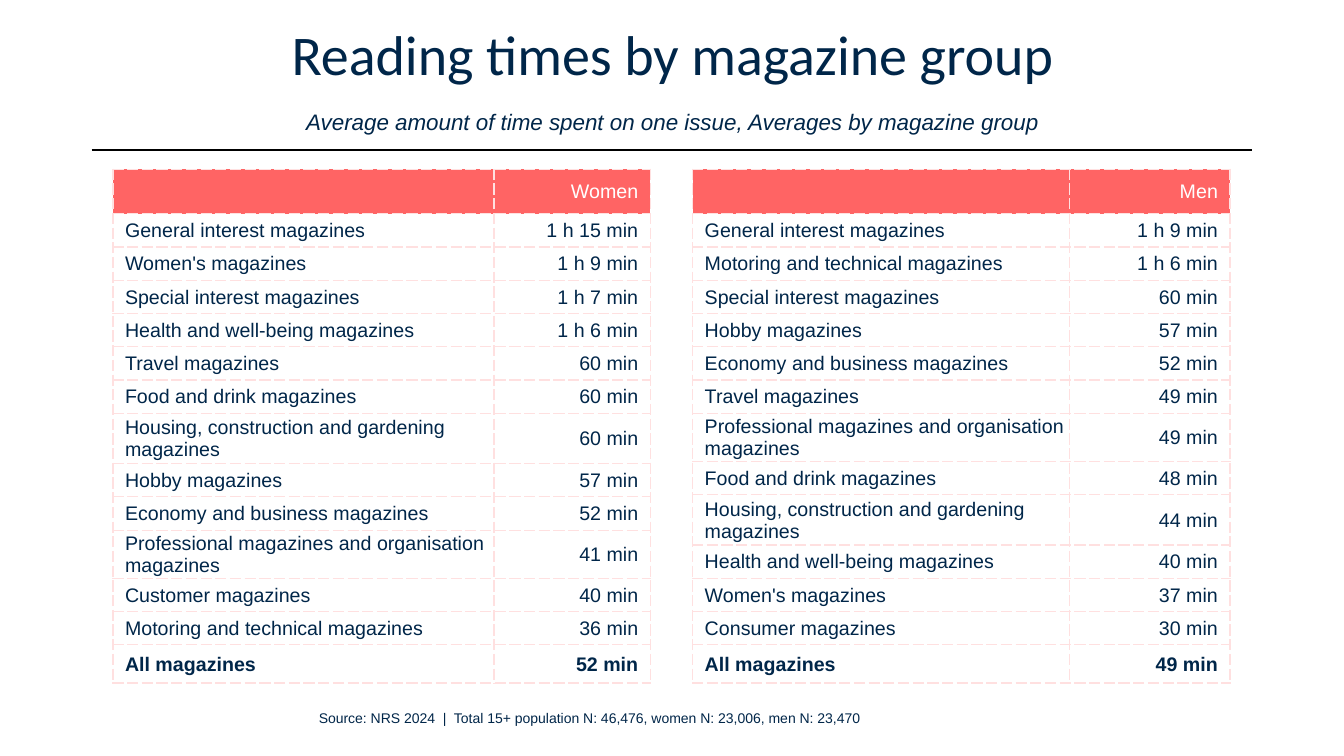
from dataclasses import dataclass

from lxml.etree import SubElement
from pptx import Presentation
from pptx.dml.color import RGBColor
from pptx.enum.shapes import MSO_CONNECTOR
from pptx.enum.text import MSO_ANCHOR, MSO_AUTO_SIZE, PP_ALIGN
from pptx.oxml import parse_xml
from pptx.oxml.ns import nsdecls, qn
from pptx.slide import Slide
from pptx.table import _Cell as Cell
from pptx.text.text import _Paragraph as Paragraph
from pptx.util import Inches, Pt

NAVY, CORAL, PINK, WHITE, BLACK = "002649", "FF6464", "FFE0E0", "FFFFFF", "000000"
HEADER_H, ROW_H, TALL_H, TOTAL_H = 0.44, 0.33, 0.5, 0.38
TABLE_TOP, TABLE_W = 1.68, 5.33
TALL_GROUP = "Housing, construction and gardening magazines"


@dataclass
class ReadingTable:
    header: str
    left: float
    label_w: float
    rows: list[tuple[str, str]]


TABLES = [
    ReadingTable("Women", 1.12, 3.78, [
        ("General interest magazines", "1 h 15 min"),
        ("Women's magazines", "1 h 9 min"),
        ("Special interest magazines", "1 h 7 min"),
        ("Health and well-being magazines", "1 h 6 min"),
        ("Travel magazines", "60 min"),
        ("Food and drink magazines", "60 min"),
        (TALL_GROUP, "60 min"),
        ("Hobby magazines", "57 min"),
        ("Economy and business magazines", "52 min"),
        ("Professional magazines and organisation magazines", "41 min"),
        ("Customer magazines", "40 min"),
        ("Motoring and technical magazines", "36 min"),
        ("All magazines", "52 min"),
    ]),
    ReadingTable("Men", 6.87, 3.74, [
        ("General interest magazines", "1 h 9 min"),
        ("Motoring and technical magazines", "1 h 6 min"),
        ("Special interest magazines", "60 min"),
        ("Hobby magazines", "57 min"),
        ("Economy and business magazines", "52 min"),
        ("Travel magazines", "49 min"),
        ("Professional magazines and organisation magazines", "49 min"),
        ("Food and drink magazines", "48 min"),
        (TALL_GROUP, "44 min"),
        ("Health and well-being magazines", "40 min"),
        ("Women's magazines", "37 min"),
        ("Consumer magazines", "30 min"),
        ("All magazines", "49 min"),
    ]),
]


def rgb(color: str) -> RGBColor:
    return RGBColor.from_string(color)


def add_run(p: Paragraph, text: str, size: float, color: str = NAVY,
            font: str = "Arial", bold: bool = False, italic: bool = False) -> None:
    r = p.add_run()
    r.text = text
    r.font.name, r.font.size = font, Pt(size)
    r.font.bold, r.font.italic = bold, italic
    r.font.color.rgb = rgb(color)


def set_borders(cell: Cell) -> None:
    """Give all four sides of the cell a dashed pink line."""
    tc_pr = cell._tc.get_or_add_tcPr()
    for i, side in enumerate(("lnL", "lnR", "lnT", "lnB")):
        tc_pr.insert(i, parse_xml(
            f'<a:{side} {nsdecls("a")} w="{Pt(1)}"><a:solidFill>'
            f'<a:srgbClr val="{PINK}"/></a:solidFill>'
            f'<a:prstDash val="sysDash"/></a:{side}>'))


def set_cell(cell: Cell, text: str, margins: tuple[float, float, float, float],
             align: PP_ALIGN, color: str, bold: bool) -> None:
    cell.vertical_anchor = MSO_ANCHOR.MIDDLE
    (cell.margin_left, cell.margin_top,
     cell.margin_right, cell.margin_bottom) = map(Inches, margins)
    p = cell.text_frame.paragraphs[0]
    p.alignment = align
    if text:
        add_run(p, text, 14, color, bold=bold)


def add_reading_table(s: Slide, t: ReadingTable) -> None:
    rows = [("", t.header), *t.rows]
    last = len(rows) - 1
    heights = [TALL_H if label == TALL_GROUP else ROW_H for label, _ in rows]
    heights[0], heights[last] = HEADER_H, TOTAL_H
    table = s.shapes.add_table(
        len(rows), 2, Inches(t.left), Inches(TABLE_TOP),
        Inches(TABLE_W), Inches(sum(heights))).table
    table.first_row = table.horz_banding = False
    table.columns[0].width = Inches(t.label_w)
    table.columns[1].width = Inches(TABLE_W - t.label_w)
    for i, (texts, height) in enumerate(zip(rows, heights)):
        table.rows[i].height = Inches(height)
        for j, text in enumerate(texts):
            cell = table.cell(i, j)
            if i == 0:
                cell.fill.solid()
                cell.fill.fore_color.rgb = rgb(CORAL)
                margins = (0.12, 0.05, 0.12, 0.05)
            else:
                cell.fill.background()
                margins = (0.01, 0.01, 0.12, 0) if j else (0.12, 0.01, 0.01, 0)
            set_cell(cell, text, margins, PP_ALIGN.RIGHT if j else PP_ALIGN.LEFT,
                     NAVY if i else WHITE, i == last)
            set_borders(cell)


def add_title(s: Slide) -> None:
    title = s.shapes.title
    title.left, title.top = Inches(0.92), Inches(0.32)
    title.width, title.height = Inches(11.5), Inches(1.07)
    tf = title.text_frame
    tf.auto_size = MSO_AUTO_SIZE.NONE
    tf.vertical_anchor = MSO_ANCHOR.MIDDLE
    p = tf.paragraphs[0]
    p.alignment = PP_ALIGN.CENTER
    p.line_spacing, p.space_after = Pt(35), Pt(18)
    add_run(p, "Reading times by magazine group", 40, font="Calibri")
    p.add_line_break()
    add_run(p, "Average amount of time spent on one issue, Averages by magazine group",
            16, italic=True)


def add_rule(s: Slide) -> None:
    line = s.shapes.add_connector(MSO_CONNECTOR.STRAIGHT, Inches(0.91), Inches(1.49),
                                  Inches(12.42), Inches(1.49))
    line.line.color.rgb = rgb(BLACK)
    line.line.width = Pt(1)
    SubElement(line._element.spPr, qn("a:effectLst"))


def add_source(s: Slide) -> None:
    tf = s.shapes.add_textbox(Inches(2.51), Inches(6.99),
                              Inches(6.67), Inches(0.27)).text_frame
    tf.word_wrap = True
    tf.auto_size = MSO_AUTO_SIZE.SHAPE_TO_FIT_TEXT
    p = tf.paragraphs[0]
    p.alignment = PP_ALIGN.CENTER
    add_run(p, "Source: NRS 2024  |  Total 15+ population N: 46,476, "
               "women N: 23,006, men N: 23,470", 10)


def main() -> None:
    prs = Presentation()
    prs.slide_width, prs.slide_height = Inches(13.33), Inches(7.5)
    s = prs.slides.add_slide(prs.slide_layouts[5])
    add_rule(s)
    add_source(s)
    add_title(s)
    for t in TABLES:
        add_reading_table(s, t)
    prs.save("out.pptx")


if __name__ == "__main__":
    main()
